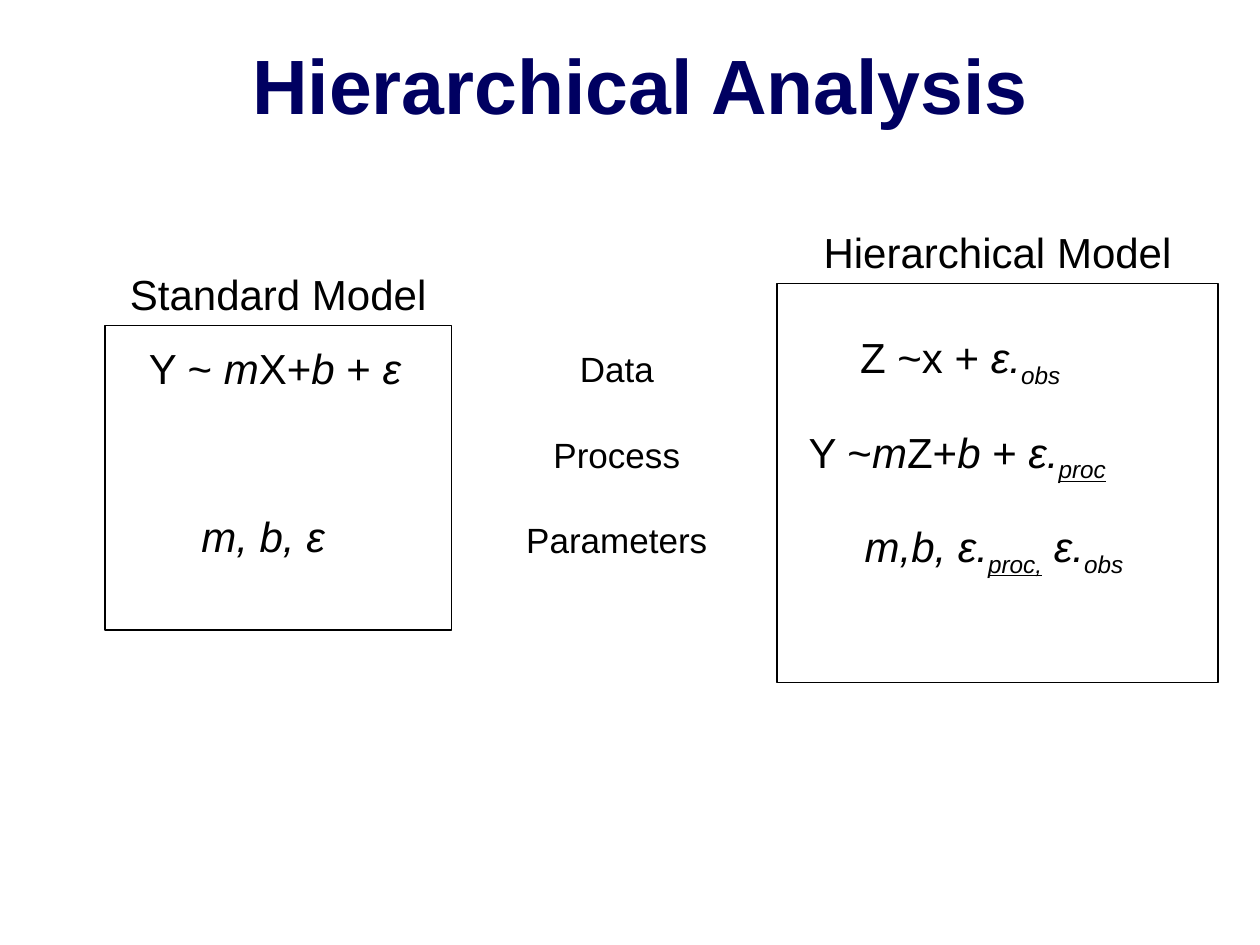
import pptx
import pptx.dml.color
import pptx.enum.shapes
import pptx.enum.text
import pptx.util

Pt = pptx.util.Pt
RGBColor = pptx.dml.color.RGBColor
ALIGN = pptx.enum.text.PP_ALIGN
ANCHOR = pptx.enum.text.MSO_ANCHOR

NAVY = RGBColor(0x00, 0x00, 0x61)
BLACK = RGBColor(0x00, 0x00, 0x00)


class Deck:
    """Style and current slide; run marks: i italic, u underline, s subscript."""
    font = "Arial"
    size = 24

    def __init__(self, prs):
        self.s = prs.slides.add_slide(prs.slide_layouts[6])
        self.shapes = self.s.shapes

    def text(self, box, paragraphs, size=None, color=BLACK, bold=False,
             align=ALIGN.LEFT, anchor=ANCHOR.TOP, wrap=False, gap=0):
        sp = self.shapes.add_textbox(*map(Pt, box))
        tf = sp.text_frame
        tf.word_wrap = wrap
        tf.vertical_anchor = anchor
        for i, runs in enumerate(paragraphs):
            p = tf.add_paragraph() if i else tf.paragraphs[0]
            p.alignment = align
            if i:
                p.space_before = Pt(gap)
            for words, marks in runs:
                self.run(p, words, marks, size or self.size, color, bold)

    def run(self, p, words, marks, size, color, bold):
        r = p.add_run()
        r.text = words
        r.font.name = self.font
        r.font.size = Pt(size)
        r.font.color.rgb = color
        r.font.bold = bold
        r.font.italic = "i" in marks
        r.font.underline = "u" in marks
        if "s" in marks:
            r._r.get_or_add_rPr().set("baseline", "-25000")

    def frame(self, box):
        sp = self.shapes.add_shape(
            pptx.enum.shapes.MSO_SHAPE.RECTANGLE, *map(Pt, box))
        sp.shadow.inherit = False
        sp.fill.background()
        sp.line.color.rgb = BLACK
        sp.line.width = Pt(0.75)

    def group(self):
        self.shapes = self.s.shapes.add_group_shape().shapes

    def ungroup(self):
        self.shapes = self.s.shapes


def main():
    prs = pptx.Presentation()
    prs.slide_width, prs.slide_height = Pt(720), Pt(540)
    d = Deck(prs)

    # Title
    d.text((48, 0, 636, 96), [[("Hierarchical Analysis", "")]], size=44,
           color=NAVY, bold=True, align=ALIGN.CENTER, anchor=ANCHOR.MIDDLE,
           wrap=True)

    # Row labels between the models
    labels = ("Data", "Process", "Parameters")
    d.text((293, 195, 119, 153), [[(label, "")] for label in labels], size=20,
           align=ALIGN.CENTER, gap=25)

    # Hierarchical model formulas
    d.text((455, 240, 190, 36), [[
        ("Y ~", ""), ("m", "i"), ("Z+", ""), ("b", "i"), (" + ", ""),
        ("ɛ.", "i"), ("proc", "ius")]])
    d.text((484.5, 186, 133, 36), [[
        ("Z ~x + ", ""), ("ɛ.", "i"), ("obs", "is")]])
    d.text((487, 294, 171, 36), [[
        ("m,b, ɛ.", "i"), ("proc,", "ius"), (" ɛ.", "i"), ("obs", "is")]])

    # Standard model: formulas and frame
    d.group()
    d.text((78, 192, 160, 36), [[
        ("Y ~ ", ""), ("m", "i"), ("X+", ""), ("b", "i"), (" + ", ""),
        ("ɛ", "i")]])
    d.text((108, 288, 86, 36), [[("m, b, ɛ", "i")]])
    d.frame((60, 186, 198, 174))
    d.ungroup()

    # Hierarchical model frame
    d.frame((444, 162, 252, 228))

    # Model headings
    for box, heading in (((66, 150, 186, 36), "Standard Model"),
                         ((462, 126, 216, 36), "Hierarchical Model")):
        d.text(box, [[(heading, "")]], align=ALIGN.CENTER)

    prs.save("out.pptx")


if __name__ == "__main__":
    main()
